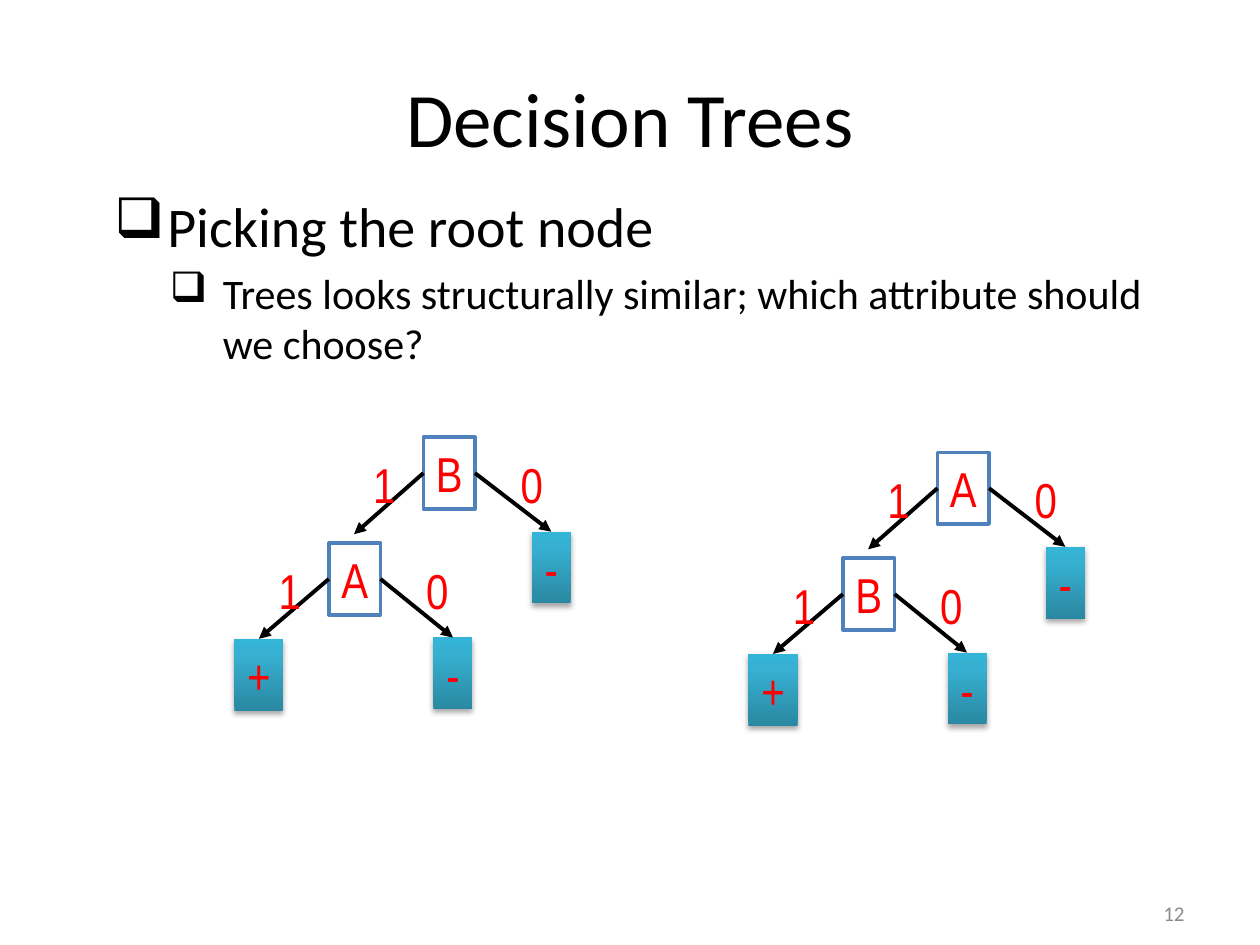
"""Build a slide that compares two decision trees with different root nodes."""
import copy
from dataclasses import dataclass
from typing import Any, Optional

import pptx
import pptx.dml.color
import pptx.enum.shapes
import pptx.enum.text
import pptx.oxml
import pptx.oxml.ns
import pptx.util

WIDTH, HEIGHT = pptx.util.Inches(10), pptx.util.Inches(7.5)
COLUMNS, ROWS = 1000, 750
COLORS = {
    "text": "000000",
    "number": "8C8C8C",
    "mark": "FF0000",
    "node": "FFFFFF",
    "edge": "4F81BD",
    "arrow": "000000",
}
LEAF_STOPS = [(0, "2A88A2"), (0.8, "37B1D2"), (1, "34B4D6")]
NODE_WIDTH, LEAF_WIDTHS, LABEL_WIDTH, BOX_ROWS = 41, {"+": 39, "-": 31}, 38, 57
LABELS = {"1": -50, "0": 67}
LABEL_DROP = 9
CHILD_STEP = (-75, 84)
OPEN_ARROW = (-55, 77)
ALIGN = pptx.enum.text.PP_ALIGN
RECTANGLE = pptx.enum.shapes.MSO_SHAPE.RECTANGLE


@dataclass
class Leaf:
    mark: str
    side: int
    across: int
    down: int


@dataclass
class Branch:
    name: str
    leaves: list[Leaf]
    child: Optional["Branch"] = None


@dataclass
class Bullet:
    text: str
    size: int
    level: int
    indent: float


def x(columns: float) -> int:
    return round(WIDTH * columns / COLUMNS)


def y(rows: float) -> int:
    return round(HEIGHT * rows / ROWS)


def area(column: float, row: float, width: float, height: float) -> tuple[int, int, int, int]:
    return x(column), y(row), x(width), y(height)


def rgb(name: str) -> pptx.dml.color.RGBColor:
    return pptx.dml.color.RGBColor.from_string(COLORS.get(name, name))


def write(para: Any, text: str, size: float, color: str, font: str = "Calibri") -> None:
    span = para.add_run()
    span.text = text
    span.font.size = pptx.util.Pt(size)
    span.font.name = font
    span.font.color.rgb = rgb(color)


def write_mark(box: Any, text: str) -> None:
    box.text_frame.word_wrap = False
    para = box.text_frame.paragraphs[0]
    para.alignment = ALIGN.CENTER
    write(para, text, 28, "mark", "Arial Narrow")


def draw_node(group: Any, name: str, column: float, row: float) -> Any:
    box = group.shapes.add_shape(RECTANGLE, *area(column, row, NODE_WIDTH, BOX_ROWS))
    box.shadow.inherit = False
    box.fill.solid()
    box.fill.fore_color.rgb = rgb("node")
    box.line.color.rgb = rgb("edge")
    box.line.width = pptx.util.Pt(2)
    write_mark(box, name)
    return box


def draw_leaf(group: Any, mark: str, column: float, row: float) -> Any:
    box = group.shapes.add_shape(RECTANGLE, *area(column, row, LEAF_WIDTHS[mark], BOX_ROWS))
    box.fill.gradient()
    box.fill.gradient_angle = 90
    stop_list = box.element.spPr.find(".//" + pptx.oxml.ns.qn("a:gsLst"))
    stop_list.append(copy.deepcopy(stop_list[-1]))
    for stop, (position, color) in zip(box.fill.gradient_stops, LEAF_STOPS):
        stop.position = position
        stop.color.rgb = rgb(color)
    box.line.fill.background()
    box.shadow.inherit = False
    box.element.spPr.find(pptx.oxml.ns.qn("a:effectLst")).append(pptx.oxml.parse_xml(
        f'<a:outerShdw {pptx.oxml.ns.nsdecls("a")} blurRad="40000" dist="23000" '
        'dir="5400000" rotWithShape="0"><a:srgbClr val="000000">'
        '<a:alpha val="35000"/></a:srgbClr></a:outerShdw>'))
    write_mark(box, mark)
    return box


def draw_arrow(group: Any, node: Any, side: int, column: float, row: float,
               target: Any = None) -> None:
    arrow = group.shapes.add_connector(
        pptx.enum.shapes.MSO_CONNECTOR.STRAIGHT, node.left, node.top, x(column), y(row))
    arrow.begin_connect(node, side)
    if target is not None:
        arrow.end_connect(target, 0)
    arrow.line.color.rgb = rgb("arrow")
    arrow.line.width = pptx.util.Pt(2.25)
    for parent, tag in ((arrow.line._get_or_add_ln(), 'tailEnd type="triangle"'),
                        (arrow.element.spPr, "effectLst")):
        name, _, rest = tag.partition(" ")
        parent.append(pptx.oxml.parse_xml(
            f'<a:{name} {pptx.oxml.ns.nsdecls("a")} {rest}/>'))


def draw_branch(group: Any, branch: Branch, column: float, row: float) -> None:
    node = draw_node(group, branch.name, column, row)
    for leaf in branch.leaves:
        place = column + leaf.across, row + leaf.down
        target = draw_leaf(group, leaf.mark, *place)
        draw_arrow(group, node, leaf.side, *place, target)
    if branch.child:
        draw_arrow(group, node, 1, column + OPEN_ARROW[0], row + OPEN_ARROW[1])
    for text, across in LABELS.items():
        label = group.shapes.add_textbox(
            *area(column + across, row + LABEL_DROP, LABEL_WIDTH, BOX_ROWS))
        write_mark(label, text)
    if branch.child:
        draw_branch(group, branch.child, column + CHILD_STEP[0], row + CHILD_STEP[1])


def draw_tree(page: Any, root: str, inner: str, column: float, row: float) -> None:
    child = Branch(inner, [Leaf("+", 1, -75, 76), Leaf("-", 3, 83, 75)])
    tree = Branch(root, [Leaf("-", 3, 86, 75)], child)
    draw_branch(page.shapes.add_group_shape(), tree, column, row)


def write_bullet(para: Any, bullet: Bullet) -> None:
    para.level = bullet.level
    para.space_before = pptx.util.Pt(bullet.size * 0.2)
    properties = para._p.get_or_add_pPr()
    properties.set("marL", str(pptx.util.Inches(bullet.indent)))
    properties.set("indent", str(pptx.util.Inches(-0.42)))
    properties.append(pptx.oxml.parse_xml(
        f'<a:buChar {pptx.oxml.ns.nsdecls("a")} char="❑"/>'))
    write(para, bullet.text, bullet.size, "text")


def main() -> None:
    deck = pptx.Presentation()
    deck.slide_width, deck.slide_height = WIDTH, HEIGHT
    page = deck.slides.add_slide(deck.slide_layouts[5])

    title = page.shapes.title
    title.left, title.top, title.width, title.height = area(50, 30, 900, 125)
    title.text_frame.vertical_anchor = pptx.enum.text.MSO_ANCHOR.MIDDLE
    title.text_frame.paragraphs[0].alignment = ALIGN.CENTER
    write(title.text_frame.paragraphs[0], "Decision Trees", 44, "text")

    bullets = [
        Bullet("Picking the root node", 32, 0, 0.48),
        Bullet("Trees looks structurally similar; which attribute should we choose?",
               24, 1, 0.92),
    ]
    body = page.shapes.add_textbox(*area(75, 147, 850, 509)).text_frame
    body.word_wrap = True
    for index, bullet in enumerate(bullets):
        write_bullet(body.add_paragraph() if index else body.paragraphs[0], bullet)

    number = page.shapes.add_textbox(*area(717, 705, 233, 40)).text_frame
    number.word_wrap = True
    number.vertical_anchor = pptx.enum.text.MSO_ANCHOR.MIDDLE
    number.paragraphs[0].alignment = ALIGN.RIGHT
    write(number.paragraphs[0], "12", 12, "number")

    draw_tree(page, "B", "A", 336, 347)
    draw_tree(page, "A", "B", 744, 359)
    deck.save("out.pptx")


if __name__ == "__main__":
    main()
